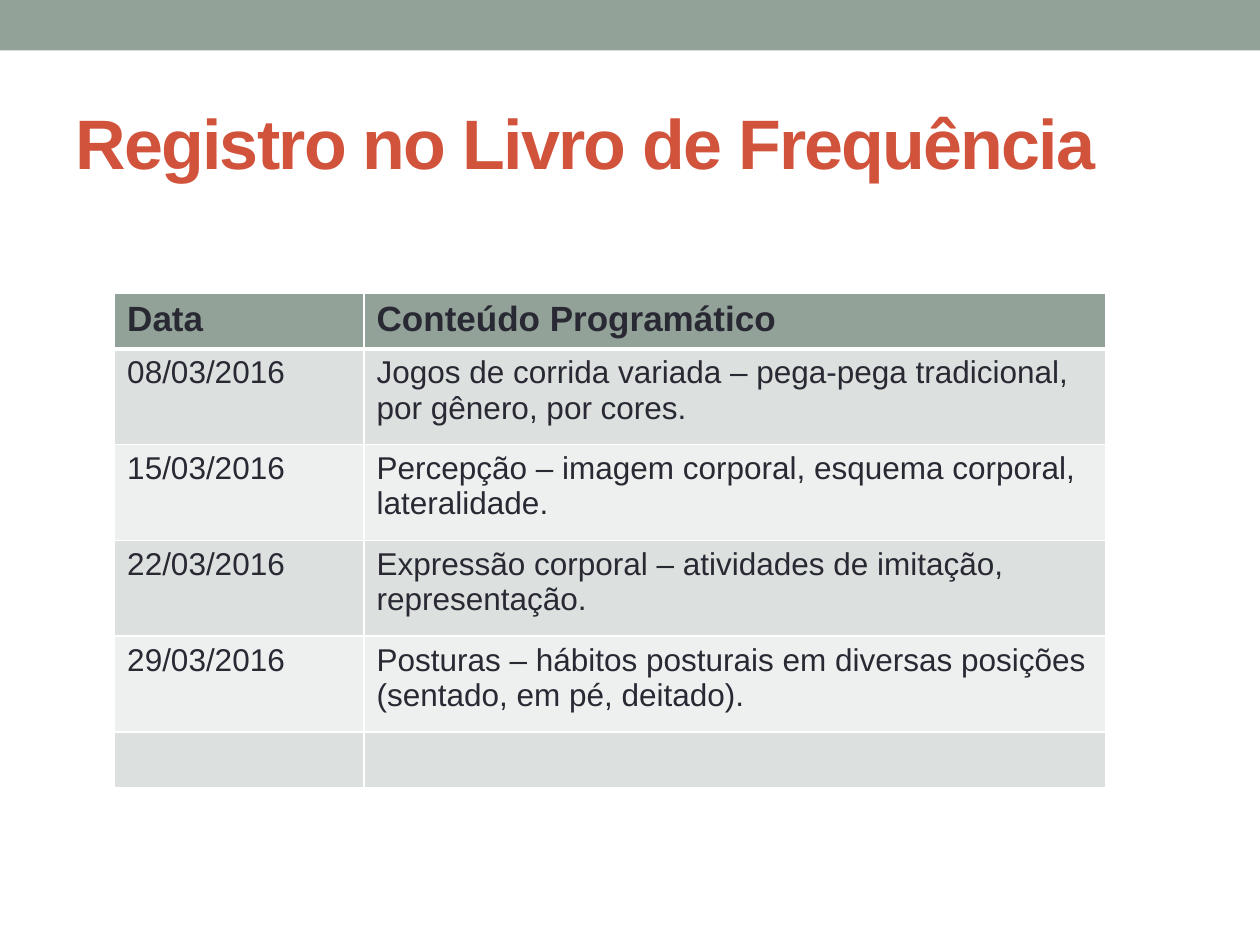
from lxml import etree
from pptx import Presentation
from pptx import util as u
from pptx.dml.color import RGBColor
from pptx.enum import shapes, text
from pptx.oxml import ns

FONT = "Arial"
SAGE, RED, INK, WHITE = "93A299", "D2533C", "292934", "FFFFFF"
BANDS = ["DCE0DE", "EEF0EF"]
COLUMN_WIDTHS = [1.98, 5.89]
ROW_HEIGHTS = [0.44, 0.76, 0.76, 0.76, 0.76, 0.44]
ROWS = [
    ("Data", "Conteúdo Programático"),
    ("08/03/2016", "Jogos de corrida variada – pega-pega tradicional, por gênero, por cores."),
    ("15/03/2016", "Percepção – imagem corporal, esquema corporal, lateralidade."),
    ("22/03/2016", "Expressão corporal – atividades de imitação, representação."),
    ("29/03/2016", "Posturas – hábitos posturais em diversas posições (sentado, em pé, deitado)."),
    ("", ""),
]


def color(value):
    """Turn a hex string into a colour."""
    return RGBColor.from_string(value)


def inches(box):
    """Turn a box of numbers into lengths."""
    return [u.Inches(value) for value in box]


def style_font(font, size, value, bold):
    """Set the typeface, size, colour and weight of a font."""
    font.name = FONT
    font.size = u.Pt(size)
    font.bold = bold
    font.color.rgb = color(value)


def add_band(slide, box):
    """Draw the plain band across the top."""
    band = slide.shapes.add_shape(shapes.MSO_SHAPE.RECTANGLE, *inches(box))
    band.shadow.inherit = False
    band.fill.solid()
    band.fill.fore_color.rgb = color(SAGE)
    band.line.fill.background()


def add_title(slide, box, wording):
    """Place the tightly spaced title."""
    text_frame = slide.shapes.add_textbox(*inches(box)).text_frame
    text_frame.word_wrap = True
    text_frame.vertical_anchor = text.MSO_ANCHOR.MIDDLE
    text_frame.text = wording
    run = text_frame.paragraphs[0].runs[0]
    style_font(run.font, 40, RED, True)
    run.font._element.set("spc", "-100")


def add_border(cell, side, width):
    """Draw a white border on one side of a cell."""
    properties = cell._tc.get_or_add_tcPr()
    line = etree.SubElement(properties, ns.qn(f"a:ln{side}"), w=str(u.Pt(width)))
    fill = etree.SubElement(line, ns.qn("a:solidFill"))
    etree.SubElement(fill, ns.qn("a:srgbClr"), val=WHITE)


def fill_cell(cell, wording, row):
    """Set the borders, fill and text of a cell."""
    header = row == 0
    for side in "LRTB":
        thick = (header and side == "B") or (row == 1 and side == "T")
        add_border(cell, side, 3 if thick else 1)
    cell.fill.solid()
    cell.fill.fore_color.rgb = color(SAGE if header else BANDS[(row - 1) % 2])
    cell.text_frame.text = wording
    for run in cell.text_frame.paragraphs[0].runs:
        style_font(run.font, 20 if header else 18, INK, header)


def add_schedule(slide, box):
    """Place the table of dates and contents."""
    frame = slide.shapes.add_table(len(ROWS), len(COLUMN_WIDTHS), *inches(box))
    table = frame.table
    for column, width in zip(table.columns, COLUMN_WIDTHS):
        column.width = u.Inches(width)
    for row, (height, wordings) in enumerate(zip(ROW_HEIGHTS, ROWS)):
        table.rows[row].height = u.Inches(height)
        for column, wording in enumerate(wordings):
            fill_cell(table.cell(row, column), wording, row)


def main():
    """Build and save the slide."""
    presentation = Presentation()
    presentation.slide_width, presentation.slide_height = inches((10, 7.5))
    slide = presentation.slides.add_slide(presentation.slide_layouts[6])
    add_band(slide, (0, 0, 10, 0.4))
    add_title(slide, (0.5, 0.58, 9, 1.08), "Registro no Livro de Frequência")
    add_schedule(slide, (0.91, 2.33, sum(COLUMN_WIDTHS), sum(ROW_HEIGHTS)))
    presentation.save("out.pptx")


if __name__ == "__main__":
    main()
